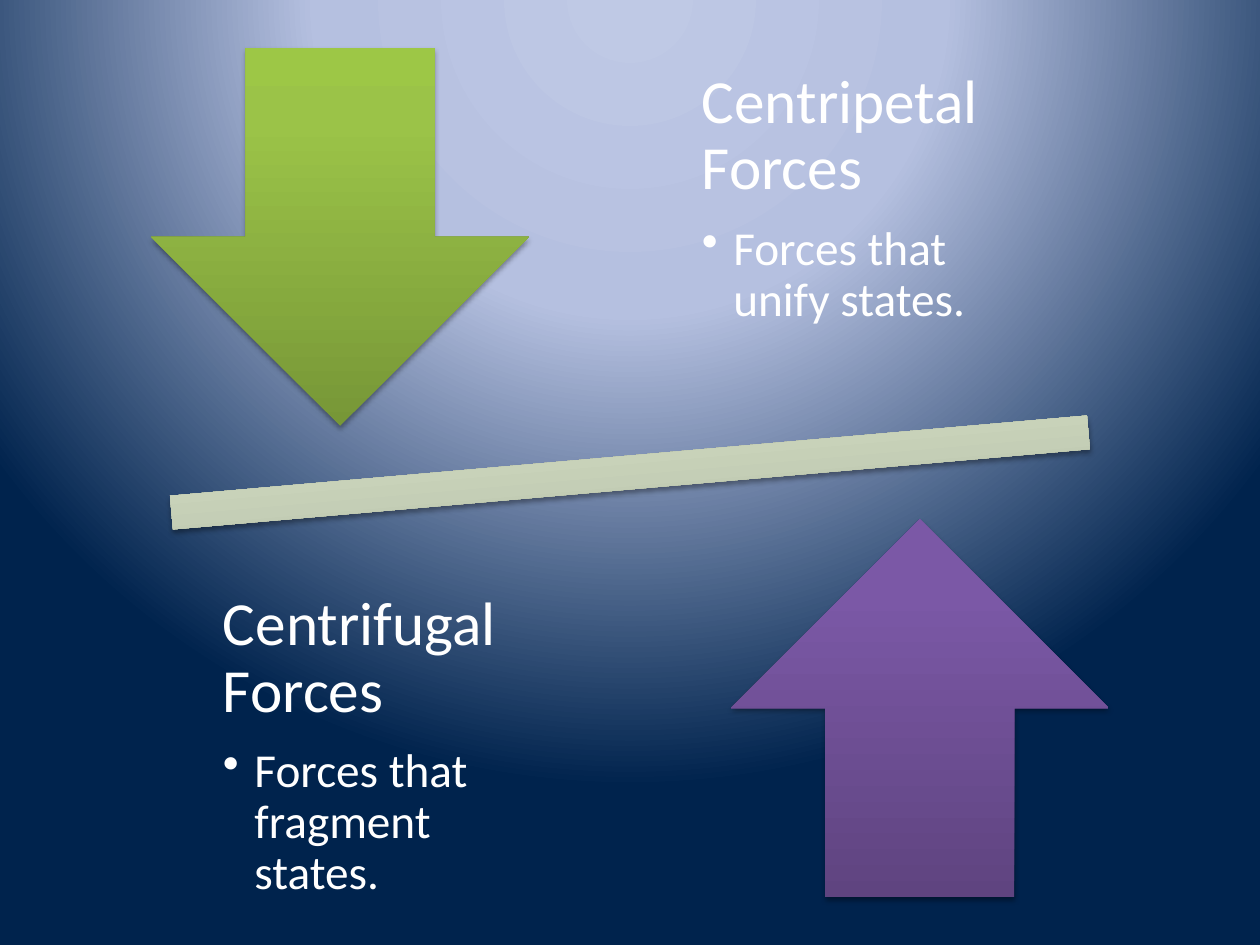
from pptx import Presentation
from pptx.dml.color import RGBColor
from pptx.enum.shapes import MSO_SHAPE as Preset
from pptx.enum.text import MSO_ANCHOR as Anchor
from pptx.oxml import parse_xml
from pptx.oxml.ns import nsdecls, qn
from pptx.util import Inches, Pt

COLORS = {
    "text": "FFFFFF",
    "shadow": "000000",
    "background": ["BFC9E5", "B5C0E0", "00234D"],
    "bar": ["A6AF9A", "D8E3C8", "D9E4C8"],
    "green": ["779737", "9BC348", "9DC746"],
    "purple": ["5F4480", "7B58A6", "7C57A8"],
}
RADIAL = '<a:path path="circle"><a:fillToRect l="50000" t="-80000" r="50000" b="180000"/></a:path>'
UPWARD = '<a:lin ang="16200000" scaled="0"/>'
ARROW_SIZE = 3
TEXT_WIDTH, TEXT_HEIGHT = 3.2, 3.15


def apply_gradient(target, fill, name, middle, direction):
    """Give a shape or slide background a three-stop gradient."""
    fill.gradient()
    stops = "".join(
        f'<a:gs pos="{position * 1000}"><a:srgbClr val="{color}"/></a:gs>'
        for position, color in zip((0, middle, 100), COLORS[name])
    )
    gradient = target.element.find(".//" + qn("a:gradFill"))
    gradient.getparent().replace(gradient, parse_xml(
        f'<a:gradFill {nsdecls("a")} rotWithShape="1"><a:gsLst>{stops}</a:gsLst>{direction}</a:gradFill>'
    ))


def add_solid(slide, preset, left, top, width, height, name, rotation=0):
    """Add a borderless gradient shape with a soft shadow below it."""
    shape = slide.shapes.add_shape(preset, Inches(left), Inches(top), Inches(width), Inches(height))
    shape.rotation = rotation
    apply_gradient(shape, shape.fill, name, 80, UPWARD)
    shape.line.fill.background()
    shape.shadow.inherit = False
    effects = shape.element.spPr.find(qn("a:effectLst"))
    effects.append(parse_xml(
        f'<a:outerShdw {nsdecls("a")} blurRad="{Pt(3.1)}" dist="{Pt(1.8)}" dir="5400000" rotWithShape="0">'
        f'<a:srgbClr val="{COLORS["shadow"]}"><a:alpha val="35000"/></a:srgbClr></a:outerShdw>'
    ))


def format_paragraph(paragraph, text, size, after):
    """Set a paragraph's text, font and spacing, with space after in percent."""
    paragraph.text = text
    paragraph.line_spacing = 0.9
    paragraph.space_after = Pt(0)
    spacing = paragraph._p.pPr.find(qn("a:spcAft"))
    spacing.clear()
    spacing.append(parse_xml(f'<a:spcPct {nsdecls("a")} val="{after * 1000}"/>'))
    font = paragraph.runs[0].font
    font.name = "Calibri"
    font.size = Pt(size)
    font.color.rgb = RGBColor.from_string(COLORS["text"])


def add_description(slide, left, top, title, detail):
    """Add a force's title with one bullet below it."""
    box = slide.shapes.add_textbox(Inches(left), Inches(top), Inches(TEXT_WIDTH), Inches(TEXT_HEIGHT))
    frame = box.text_frame
    frame.word_wrap = True
    frame.vertical_anchor = Anchor.MIDDLE
    frame.margin_left = frame.margin_right = Inches(0.27)
    frame.margin_top = frame.margin_bottom = Inches(0.27)
    format_paragraph(frame.paragraphs[0], title, 35, 35)
    bullet = frame.add_paragraph()
    bullet.level = 1
    properties = bullet._p.get_or_add_pPr()
    properties.set("marL", str(Inches(0.25)))
    properties.set("indent", str(-Inches(0.25)))
    properties.append(parse_xml(f'<a:buChar {nsdecls("a")} char="•"/>'))
    format_paragraph(bullet, detail, 27, 15)


def add_balance(slide, left, top, width, height):
    """Place the tilted bar and the two opposed forces in a box."""
    right, bottom = left + width, top + height
    add_solid(slide, Preset.MATH_MINUS, left + 0.03, top + 3.18, width - 0.06, 1.14, "bar", 355)
    add_solid(slide, Preset.DOWN_ARROW, left + 1.2, top + 0.38, ARROW_SIZE, ARROW_SIZE, "green")
    add_description(slide, right - 1.5 - TEXT_WIDTH, top, "Centripetal Forces", "Forces that unify states.")
    add_solid(slide, Preset.UP_ARROW, right - 1.2 - ARROW_SIZE, bottom - 0.38 - ARROW_SIZE,
              ARROW_SIZE, ARROW_SIZE, "purple")
    add_description(slide, left + 1.5, bottom - TEXT_HEIGHT, "Centrifugal Forces", "Forces that fragment states.")


def main():
    """Build and save the slide."""
    presentation = Presentation()
    presentation.slide_width = Inches(10)
    presentation.slide_height = Inches(7.5)
    slide = presentation.slides.add_slide(presentation.slide_layouts[6])
    apply_gradient(slide, slide.background.fill, "background", 40, RADIAL)
    add_balance(slide, 0, 0, 10, 7.5)
    presentation.save("out.pptx")


if __name__ == "__main__":
    main()
